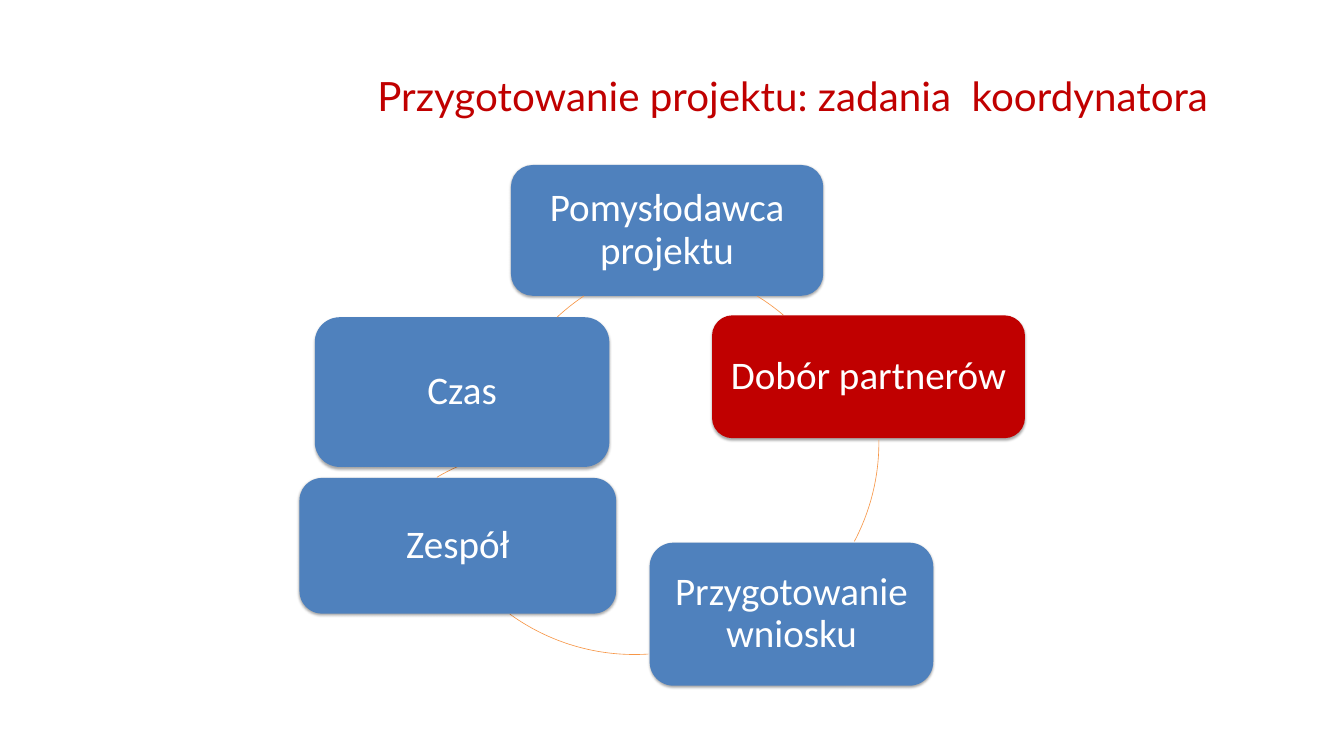
from lxml import etree
from pptx import Presentation
from pptx.dml.color import RGBColor
from pptx.enum.shapes import MSO_SHAPE
from pptx.enum.text import MSO_ANCHOR, PP_ALIGN
from pptx.oxml import parse_xml
from pptx.oxml.ns import nsdecls
from pptx.util import Inches, Pt

ROUND = MSO_SHAPE.ROUNDED_RECTANGLE
ARC = MSO_SHAPE.ARC
MIDDLE = MSO_ANCHOR.MIDDLE
CENTER = PP_ALIGN.CENTER

BLUE, RED, ORANGE, WHITE = "4F81BD", "C00000", "F79646", "FFFFFF"
SIZE = 6.94

STEPS = [
    ("Pomysłodawca projektu", BLUE, (3.46, 0, 5.11, 2.14)),
    ("Dobór partnerów", RED, (6.75, 2.46, 5.12, 2.01)),
    ("Przygotowanie wniosku", BLUE, (5.73, 6.18, 4.64, 2.34)),
    ("Zespół", BLUE, (0, 5.12, 5.18, 2.22)),
    ("Czas", BLUE, (0.25, 2.49, 4.82, 2.45)),
]
ARCS = [
    (2.2, 1.63, 301.6, 310.4),
    (2.54, 1.07, 359.3, 27.8),
    (2.01, 1.07, 86.2, 126),
    (0.54, 4.63, 239.5, 245.7),
    (3.11, 1.56, 227.1, 236.3),
]


def color(code):
    return RGBColor.from_string(code)


def apply(target, values):
    for name, value in values.items():
        setattr(target, name, value)


def write(shape, text, frame, para, font, tint):
    body = shape.text_frame
    apply(body, {"word_wrap": True, "vertical_anchor": MIDDLE, **frame})
    line = body.paragraphs[0]
    line.text = text
    apply(line, {"alignment": CENTER, **para})
    apply(line.runs[0].font, font)
    line.runs[0].font.color.rgb = color(tint)


def shade(shape):
    shape.shadow.inherit = False
    props = shape.fill._xPr
    effects = props.find("{*}effectLst")
    shadow = parse_xml(
        f'<a:outerShdw {nsdecls("a")} blurRad="{Pt(3.1)}" dist="{Pt(1.8)}" '
        'dir="5400000" rotWithShape="0"/>'
    )
    tint = etree.SubElement(shadow, shadow.tag.replace("outerShdw", "srgbClr"), val="000000")
    etree.SubElement(tint, shadow.tag.replace("outerShdw", "alpha"), val="35000")
    effects.append(shadow)


def add_title(slide, box):
    shape = slide.shapes.add_textbox(*map(Inches, box))
    frame = {"margin_left": Inches(2.04), "margin_right": Inches(0.1)}
    font = {"name": "Lato", "size": Pt(47.5)}
    write(shape, "Przygotowanie projektu: zadania  koordynatora", frame, {}, font, RED)


def add_step(slide, box, text, fill):
    shape = slide.shapes.add_shape(ROUND, *map(Inches, box))
    shape.fill.solid()
    shape.fill.fore_color.rgb = color(fill)
    shape.line.fill.background()
    shade(shape)
    sides = ("left", "right", "top", "bottom")
    frame = {f"margin_{side}": Inches(0.19) for side in sides}
    font = {"name": "Calibri", "size": Pt(46)}
    write(shape, text, frame, {"line_spacing": 0.9}, font, WHITE)


def add_arc(slide, box, start, end):
    shape = slide.shapes.add_shape(ARC, *map(Inches, box))
    shape.shadow.inherit = False
    for index, angle in enumerate((start, end)):
        shape.adjustments[index] = angle * 0.6
    shape.fill.background()
    shape.line.color.rgb = color(ORANGE)
    shape.line.width = Pt(0.75)


def add_cycle(slide, left, top):
    for (text, fill, (x, y, w, h)), (dx, dy, start, end) in zip(STEPS, ARCS):
        add_step(slide, (left + x, top + y, w, h), text, fill)
        add_arc(slide, (left + dx, top + dy, SIZE, SIZE), start, end)


def main():
    deck = Presentation()
    apply(deck, {"slide_width": Inches(21.99), "slide_height": Inches(12.37)})
    slide = deck.slides.add_slide(deck.slide_layouts[6])
    add_title(slide, (3.53, 0.66, 16.94, 1.79))
    add_cycle(slide, 4.9, 2.7)
    deck.save("out.pptx")


if __name__ == "__main__":
    main()
